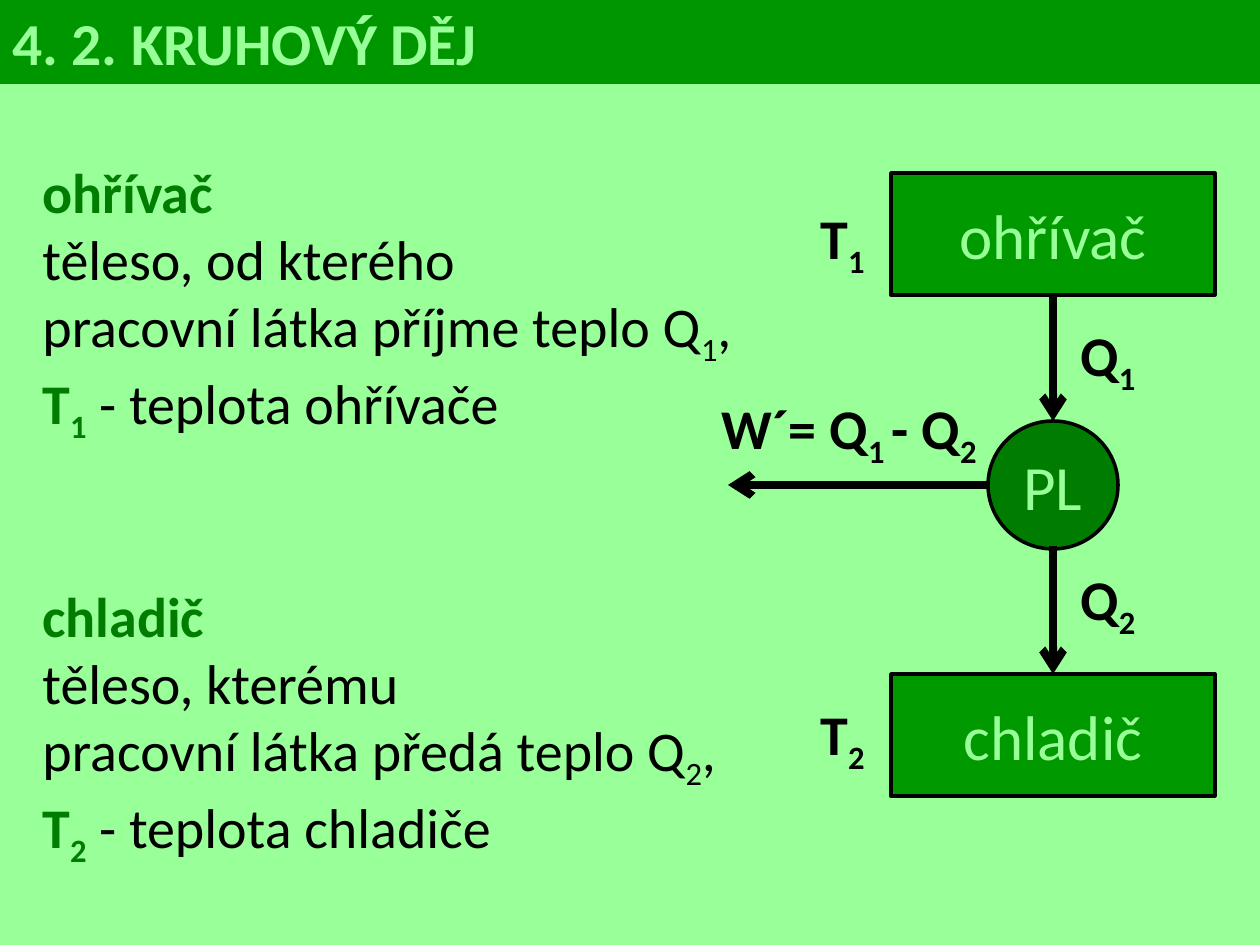
from lxml import etree
from pptx import Presentation
from pptx import util as u
from pptx.dml.color import RGBColor
from pptx.enum import shapes, text
from pptx.oxml.ns import qn

PX = 914400 / 126
BLACK, PALE, DARK = "000000", "99FF99", "007D00"
BAND, BOX = "009600", "009900"
LEFT, CENTER = text.PP_ALIGN.LEFT, text.PP_ALIGN.CENTER


def px(*lengths):
    return [u.Emu(round(length * PX)) for length in lengths]


def paint(color_format, color):
    color_format.rgb = RGBColor.from_string(color)


def fill(part, color):
    part.fill.solid()
    paint(part.fill.fore_color, color)


def write(paragraph, words, size=32, color=BLACK, bold=False):
    """Add words to a paragraph; ~ marks enclose a subscript, a newline breaks the line."""
    for number, part in enumerate(words.split("~")):
        for row, line in enumerate(part.split("\n")):
            if row:
                paragraph.add_line_break()
            if not line:
                continue
            run = paragraph.add_run()
            run.text = line
            run.font.name, run.font.size, run.font.bold = "Calibri", u.Pt(size), bold
            paint(run.font.color, color)
            if number % 2:
                run.font._element.set("baseline", "-25000")


def add_block(slide, kind, box, background, words, align=CENTER, outline=True, **font):
    block = slide.shapes.add_shape(kind, *px(*box))
    block.shadow.inherit = False
    fill(block, background)
    if outline:
        paint(block.line.color, BLACK)
        block.line.width = u.Pt(2)
    else:
        block.line.fill.background()
    block.text_frame.word_wrap = True
    block.text_frame.vertical_anchor = text.MSO_ANCHOR.MIDDLE
    paragraph = block.text_frame.paragraphs[0]
    paragraph.alignment = align
    write(paragraph, words, **font)
    return block


def add_label(slide, box, words):
    frame = slide.shapes.add_textbox(*px(*box)).text_frame
    frame.word_wrap = True
    write(frame.paragraphs[0], words, bold=True)


def add_arrow(slide, start, end):
    arrow = slide.shapes.add_connector(shapes.MSO_CONNECTOR.STRAIGHT, *px(*start, *end))
    paint(arrow.line.color, BLACK)
    arrow.line.width = u.Pt(4.5)
    etree.SubElement(arrow.line._get_or_add_ln(), qn("a:tailEnd"), type="arrow")
    etree.SubElement(arrow._element.spPr, qn("a:effectLst"))
    return arrow


def add_title(slide, box):
    add_block(slide, shapes.MSO_SHAPE.RECTANGLE, box, BAND, "4. 2. KRUHOVÝ DĚJ",
              align=LEFT, outline=False, size=34, color=PALE, bold=True)


def add_definitions(slide, box):
    frame = slide.shapes.add_textbox(*px(*box)).text_frame
    frame.word_wrap = True
    definitions = [
        ("ohřívač", "těleso, od kterého\npracovní látka příjme teplo Q~1~,",
         "T~1~", " - teplota ohřívače"),
        ("chladič", "těleso, kterému\npracovní látka předá teplo Q~2~,",
         "T~2~", " - teplota chladiče"),
    ]
    for number, (term, meaning, symbol, quantity) in enumerate(definitions):
        heading = frame.add_paragraph() if number else frame.paragraphs[0]
        if number:
            heading.space_before = u.Pt(78)
        write(heading, term, color=DARK, bold=True)
        write(frame.add_paragraph(), meaning)
        temperature = frame.add_paragraph()
        write(temperature, symbol, color=DARK, bold=True)
        write(temperature, quantity)


def add_cycle(slide, left, top):
    """Heat engine diagram: heater, working substance and cooler."""
    def at(x, y, *size):
        return (left + x, top + y, *size)

    rectangle = shapes.MSO_SHAPE.RECTANGLE
    font = dict(size=36, color=PALE)
    heater = add_block(slide, rectangle, at(182, 0, 324, 122), BOX, "ohřívač", **font)
    cooler = add_block(slide, rectangle, at(182, 501, 324, 122), BOX, "chladič", **font)
    substance = add_block(slide, shapes.MSO_SHAPE.OVAL, at(279, 248, 130, 128),
                          DARK, "PL", **font)

    heat_out = add_arrow(slide, at(344, 373), at(344, 501))
    heat_out.end_connect(cooler, 0)
    heat_in = add_arrow(slide, at(344, 122), at(344, 248))
    heat_in.begin_connect(heater, 2)
    heat_in.end_connect(substance, 0)
    add_arrow(slide, at(279, 312), at(19, 312))

    add_label(slide, at(0, 214, 343, 81), "W´= Q~1 ~- Q~2~")
    for x, y, words in [(99, 24, "T~1~"), (359, 141, "Q~1~"),
                        (359, 385, "Q~2~"), (99, 520, "T~2~")]:
        add_label(slide, at(x, y, 92, 81), words)


def main():
    deck = Presentation()
    deck.slide_width, deck.slide_height = px(1260, 945)
    slide = deck.slides.add_slide(deck.slide_layouts[6])
    fill(slide.background, PALE)
    add_definitions(slide, (30, 151, 747, 692))
    add_title(slide, (0, 0, 1260, 84))
    add_cycle(slide, 709, 173)
    deck.save("out.pptx")


if __name__ == "__main__":
    main()
